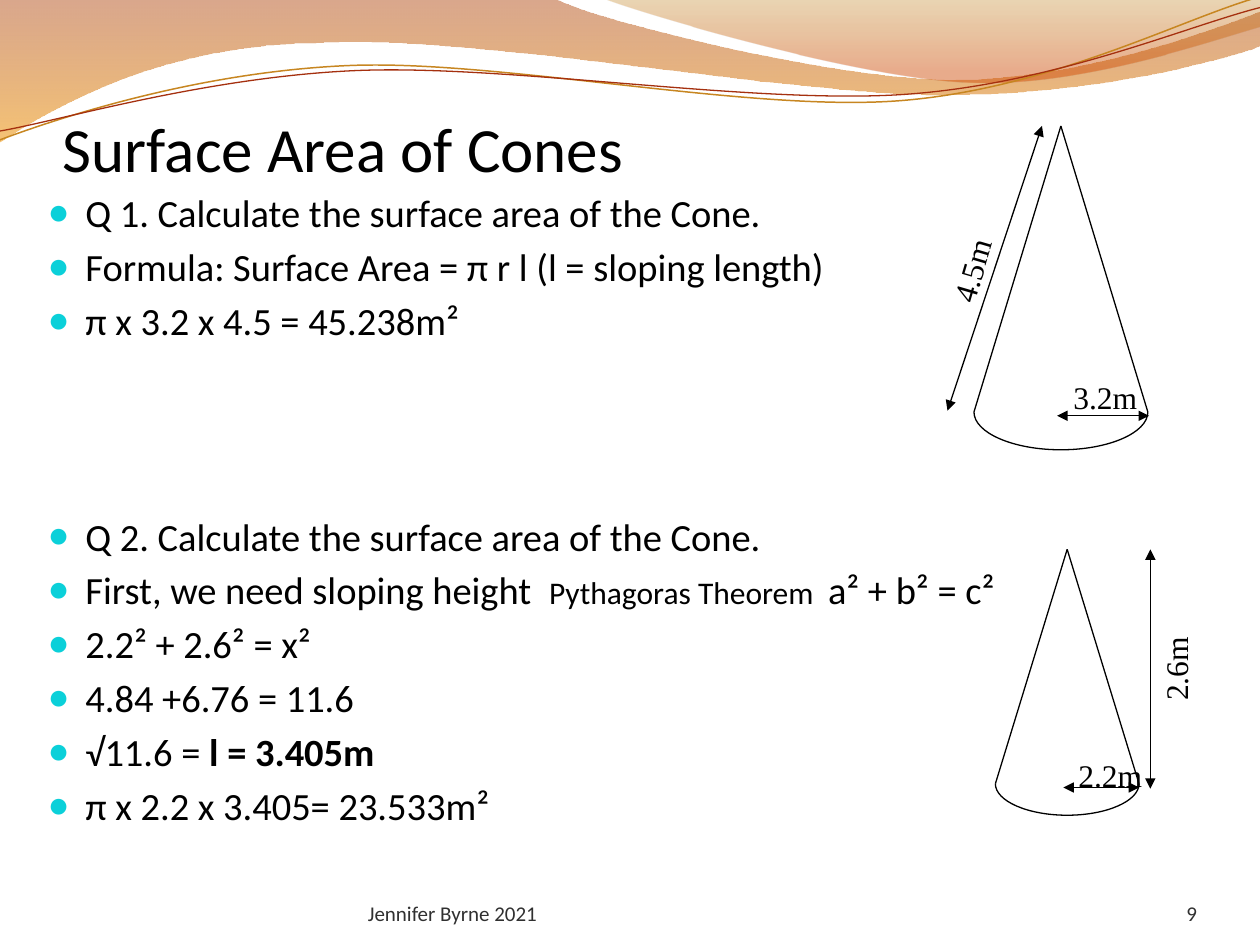
"""Build a slide on the surface area of cones, measured in a grid of 100 columns by 75 rows."""
from math import cos, radians, sin

from lxml.etree import SubElement as add_element
from pptx import Presentation
from pptx.dml.color import RGBColor as Color
from pptx.enum.shapes import MSO_CONNECTOR as Connector
from pptx.enum.text import MSO_ANCHOR as Anchor, MSO_AUTO_SIZE as AutoSize, PP_ALIGN as Align
from pptx.oxml.ns import qn
from pptx.util import Inches, Pt

CELL = Inches(0.1)
COLORS = {
    "text": "000000", "footer": "303030", "bullet": "0BD0D9",
    "rust": "AC3D02", "amber": "EE9100", "ochre": "BB7507", "orange": "CF4800",
    "gold": "C78621", "red": "A5300F",
}
BODY = {"name": "Calibri", "size": Pt(22)}
TITLE = {"name": "Calibri", "size": Pt(36)}
FOOTER = {"name": "Calibri", "size": Pt(12)}
LABEL = {"name": "Times New Roman", "size": Pt(18)}
SMALL = {"size": Pt(18)}
BOLD = {"bold": True}
TILT = 2.7

WAVES = [
    ((0, -0.1), [
        [(44, -0.1)],
        [(47.6, 1.7), (66.4, 6.3), (75.8, 6.3)],
        [(85.3, 6.3), (95.8, 2.6), (100, 0.9)],
        [(100.1, 3.6)],
        [(98.3, 4.4), (87, 7.6), (74.6, 7.5)],
        [(62.2, 7.5), (38.2, 2.8), (25.7, 3.4)],
        [(12.9, 3.5), (4.6, 8.3), (-0.1, 11.3)],
    ], [(0, "rust", 45), (1, "amber", 55)]),
    ((47.9, -0.1), [
        [(50.9, 1.1), (68.2, 6.2), (76.9, 6.5)],
        [(85.6, 6.9), (96.1, 3.2), (100, 2.1)],
        [(100, 0)],
    ], [(0, "ochre", 30), (0.8, "orange", 45)]),
]
RIBBONS = [
    ((49.9, 5.75), (0, 11.1), [
        [(4.8, 9.3), (15.8, 5.7), (27.7, 5.2)],
        [(39.5, 4.7), (59.3, 8.9), (71.3, 8)],
        [(83.3, 7.1), (93.8, 1.5), (99.8, -0.2)],
    ], "gold", 0.85),
    ((49.95, 5.9), (0, 10.4), [
        [(4.7, 9.6), (16.4, 6.1), (28.3, 5.6)],
        [(40.3, 5.1), (59.7, 8.3), (71.7, 7.5)],
        [(83.6, 6.7), (94.1, 2.1), (100, 0.6)],
    ], "red", 0.75),
]
STEPS = [
    (0, [("Q 1. Calculate the surface area of the Cone.", {})]),
    (4.4, [("Formula: Surface Area = π r l (l = sloping length)", {})]),
    (4.4, [("π x 3.2 x 4.5 = 45.238m²", {})]),
    (97, [("Q 2. Calculate the surface area of the Cone.", {})]),
    (4.4, [("First, we need sloping height  ", {}), ("Pythagoras Theorem  ", SMALL),
           ("a² + b² = c²", {})]),
    (4.4, [("2.2² + 2.6² = x²", {})]),
    (4.4, [("4.84 +6.76 = 11.6", {})]),
    (4.4, [("√11.6 = ", {}), ("l = 3.405m", BOLD)]),
    (4.4, [("π x 2.2 x 3.405= 23.533m²", {})]),
]


def cells(*values):
    """Turn grid units into whole slide units."""
    return [round(value * CELL) for value in values]


def apply(target, values):
    """Set each named attribute of the target."""
    for name, value in values.items():
        setattr(target, name, value)


def turned(point, center):
    """Turn a point clockwise around a center by the tilt of the ribbons."""
    across, down = point[0] - center[0], point[1] - center[1]
    sine, cosine = sin(radians(TILT)), cos(radians(TILT))
    return center[0] + across * cosine - down * sine, center[1] + across * sine + down * cosine


class SlidePainter:
    """Hold the current slide and draw each kind of element on it."""

    def __init__(self, slide):
        self.slide = slide

    def stroke(self, shape, color="text", width=0.75):
        """Colour the line of a shape."""
        shape.line.color.rgb = Color.from_string(COLORS[color])
        shape.line.width = Pt(width)

    def outline(self, start, segments, closed=False):
        """Draw lines (one point) and cubic curves (three points) as one freeform."""
        builder = self.slide.shapes.build_freeform(*cells(*start), scale=1.0)
        builder.add_line_segments([cells(*point) for segment in segments for point in segment], closed)
        shape = builder.convert_to_shape()
        shape.shadow.inherit = False
        shape.fill.background()
        steps = iter(list(shape._element.iter(qn("a:lnTo"))))
        for segment in segments:
            first, *others = [next(steps) for _ in segment]
            if others:
                first.tag = qn("a:cubicBezTo")
            for other in others:
                first.append(other[0])
                other.getparent().remove(other)
        return shape

    def wave(self, start, segments, stops):
        """Draw a closed band with a translucent vertical gradient."""
        shape = self.outline(start, segments, closed=True)
        shape.line.fill.background()
        shape.fill.gradient()
        shape.fill.gradient_angle = 270
        for stop, (position, color, _) in zip(shape.fill.gradient_stops, stops):
            stop.color.rgb = Color.from_string(COLORS[color])
            stop.position = position
        for element, (_, _, opacity) in zip(shape._element.iter(qn("a:srgbClr")), stops):
            add_element(element, qn("a:alpha"), val=str(opacity * 1000))

    def ribbon(self, center, start, segments, color, width):
        """Draw an open curved line as a level curve that is then tilted."""
        level = [[turned(point, center) for point in segment] for segment in segments]
        shape = self.outline(turned(start, center), level)
        shape.rotation = 360 - TILT
        self.stroke(shape, color, width)

    def line(self, start, end, arrows=False):
        """Draw a straight line, with arrowheads at both ends if asked."""
        connector = self.slide.shapes.add_connector(Connector.STRAIGHT, *cells(*start, *end))
        self.stroke(connector)
        properties = connector._element.spPr
        add_element(properties, qn("a:effectLst"))
        if arrows:
            for end_name in ("a:headEnd", "a:tailEnd"):
                add_element(properties.find(qn("a:ln")), qn(end_name), type="triangle")

    def cone(self, apex, radius, base, depth):
        """Draw two sloping sides and the front half of the base."""
        x, left, right, bottom = apex[0], apex[0] - radius, apex[0] + radius, base + depth
        bend, drop = 0.55 * radius, 0.55 * depth
        self.line((left, base), apex)
        self.line(apex, (right, base))
        self.stroke(self.outline((left, base), [
            [(left, base + drop), (x - bend, bottom), (x, bottom)],
            [(x + bend, bottom), (right, base + drop), (right, base)],
        ]))

    def text(self, box, runs, font, color="text", frame=None, align=Align.LEFT, rotation=0):
        """Add a text box with one paragraph and return its frame."""
        shape = self.slide.shapes.add_textbox(*cells(*box))
        shape.rotation = rotation
        apply(shape.text_frame, {"word_wrap": True, **(frame or {})})
        self.fill_paragraph(shape.text_frame.paragraphs[0], runs, font, color)
        shape.text_frame.paragraphs[0].alignment = align
        return shape.text_frame

    def fill_paragraph(self, paragraph, runs, font, color="text"):
        """Add formatted runs to a paragraph."""
        for words, changes in runs:
            run = paragraph.add_run()
            run.text = words
            apply(run.font, {**font, **changes})
            run.font.color.rgb = Color.from_string(COLORS[color])

    def bullets(self, box, items):
        """Add a bulleted list."""
        frame = self.text(box, [], BODY)
        for index, (space, runs) in enumerate(items):
            paragraph = frame.add_paragraph() if index else frame.paragraphs[0]
            self.fill_paragraph(paragraph, runs, BODY)
            paragraph.space_before = Pt(space)
            properties = paragraph._p.get_or_add_pPr()
            for name, value in {"marL": Inches(0.3), "indent": -Inches(0.3)}.items():
                properties.set(name, str(value))
            add_element(add_element(properties, qn("a:buClr")), qn("a:srgbClr"), val=COLORS["bullet"])
            add_element(properties, qn("a:buSzPct"), val="95000")
            add_element(properties, qn("a:buFont"), typeface=LABEL["name"])
            add_element(properties, qn("a:buChar"), char="●")


def main():
    """Draw the slide and save it."""
    presentation = Presentation()
    apply(presentation, {"slide_width": 100 * CELL, "slide_height": 75 * CELL})
    painter = SlidePainter(presentation.slides.add_slide(presentation.slide_layouts[6]))
    for wave in WAVES:
        painter.wave(*wave)
    for ribbon in RIBBONS:
        painter.ribbon(*ribbon)
    flush = {"margin_left": 0, "margin_right": 0, "margin_bottom": 0, "vertical_anchor": Anchor.BOTTOM}
    painter.text((5, 7.7, 90, 13), [("Surface Area of Cones", {})], TITLE,
                 frame={**flush, "margin_bottom": Inches(0.6)})
    painter.bullets((2.8, 14.5, 90, 53.7), STEPS)
    for box, words, align in (((29.2, 69.5, 36.7, 4), "Jennifer Byrne 2021", Align.LEFT),
                              ((86.7, 69.5, 8.3, 4), "9", Align.RIGHT)):
        painter.text(box, [(words, {})], FOOTER, "footer", flush, align)
    painter.cone((84.2, 10), 6.9, 32.7, 3)
    painter.cone((84.7, 43.6), 5.7, 62.2, 2.5)
    for start, end in (((83.9, 33), (91.2, 33)), ((75.2, 32.6), (82.7, 10)),
                       ((84.4, 62.5), (90.4, 62.5)), ((91.3, 62.6), (91.3, 43.6))):
        painter.line(start, end, arrows=True)
    for words, box, rotation in (("3.2m", (84.2, 29.5, 8.5, 4), 0),
                                 ("4.5m", (72.4, 17.9, 10.3, 4), 286.3),
                                 ("2.2m", (84.6, 59.5, 7.1, 4), 0),
                                 ("2.6m", (88.2, 49.5, 10.2, 4), 270)):
        painter.text(box, [(words, {})], LABEL, rotation=rotation,
                     frame={"auto_size": AutoSize.SHAPE_TO_FIT_TEXT})
    presentation.save("out.pptx")


if __name__ == "__main__":
    main()
